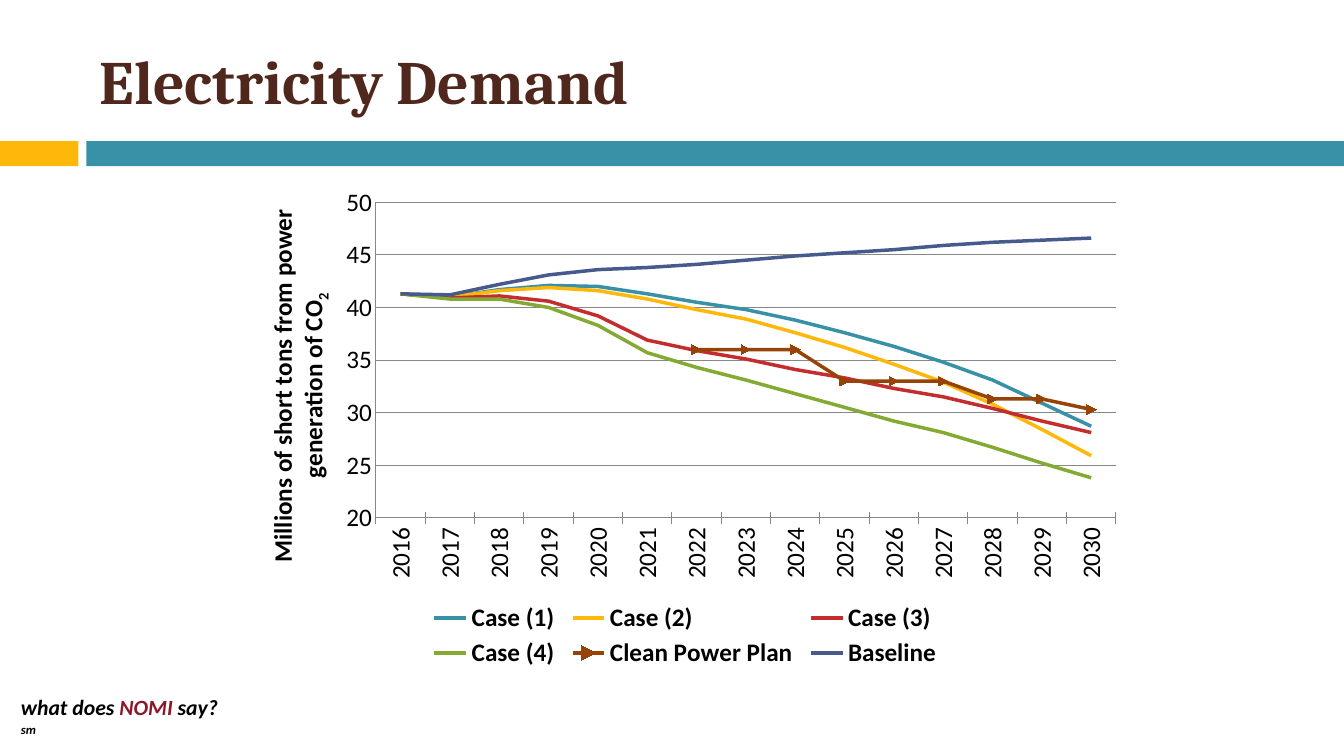
from dataclasses import dataclass

from lxml.etree import SubElement
from pptx import Presentation
from pptx.chart.data import CategoryChartData
from pptx.dml.color import RGBColor
from pptx.enum.chart import XL_CHART_TYPE as CT, XL_LEGEND_POSITION as LP
from pptx.enum.chart import XL_MARKER_STYLE as MS, XL_TICK_LABEL_POSITION as TLP, XL_TICK_MARK as TM
from pptx.enum.shapes import MSO_SHAPE
from pptx.enum.text import MSO_ANCHOR, PP_ALIGN
from pptx.oxml.ns import qn
from pptx.util import Cm, Pt


@dataclass(frozen=True)
class Theme:
    """Colours, fonts and type sizes of the slide."""
    teal: str = "3891A7"
    gold: str = "FEB80A"
    red: str = "C32D2E"
    green: str = "84AA33"
    rust: str = "964305"
    navy: str = "475A8D"
    brown: str = "4F271C"
    wine: str = "8C172C"
    black: str = "000000"
    grey: str = "878787"
    heading: str = "Cambria"
    body: str = "Calibri"
    title_size: float = 44
    chart_size: float = 18
    tag_size: float = 15.5


@dataclass(frozen=True)
class Box:
    """A rectangle in centimetres."""
    x: float
    y: float
    w: float
    h: float

    def emu(self):
        """Return the four lengths for python-pptx."""
        return Cm(self.x), Cm(self.y), Cm(self.w), Cm(self.h)


T = Theme()
YEARS = range(2016, 2031)
SERIES = {
    "Case (1)": (T.teal, [41.3, 41, 41.7, 42.1, 42, 41.3, 40.5, 39.8, 38.8, 37.6, 36.3, 34.8, 33.1, 30.9, 28.7]),
    "Case (2)": (T.gold, [41.3, 41, 41.6, 41.9, 41.6, 40.8, 39.8, 38.9, 37.6, 36.2, 34.6, 32.9, 30.8, 28.4, 25.9]),
    "Case (3)": (T.red, [41.3, 40.9, 41.1, 40.6, 39.2, 36.9, 35.9, 35.1, 34.1, 33.3, 32.3, 31.5, 30.4, 29.2, 28.1]),
    "Case (4)": (T.green, [41.3, 40.8, 40.8, 40, 38.3, 35.7, 34.3, 33.1, 31.8, 30.5, 29.2, 28.1, 26.7, 25.2, 23.8]),
    "Clean Power Plan": (T.rust, [None] * 6 + [36, 36, 36, 33, 33, 33, 31.3, 31.3, 30.3]),
    "Baseline": (T.navy, [41.3, 41.2, 42.2, 43.1, 43.6, 43.8, 44.1, 44.5, 44.9, 45.2, 45.5, 45.9, 46.2, 46.4, 46.6]),
}


def style_font(font, size, color=T.black, name=T.body, bold=False, italic=False):
    """Format a font."""
    font.size, font.name, font.bold, font.italic = Pt(size), name, bold, italic
    font.color.rgb = RGBColor.from_string(color)


def add_text(p, text, size, baseline=0, **fmt):
    """Add a formatted run to a paragraph."""
    r = p.add_run()
    r.text = text
    style_font(r.font, size, **fmt)
    if baseline:
        r._r.get_or_add_rPr().set("baseline", str(baseline * 1000))


def add_title(s, box, text):
    """Fill the title placeholder."""
    sp = s.shapes.title
    sp.left, sp.top, sp.width, sp.height = box.emu()
    tf = sp.text_frame
    tf.vertical_anchor = MSO_ANCHOR.MIDDLE
    p = tf.paragraphs[0]
    p.alignment = PP_ALIGN.LEFT
    add_text(p, text, T.title_size, color=T.brown, name=T.heading, bold=True)


def add_band(s, box, tab=1.98, gap=0.2):
    """Draw the gold tab and the teal bar beside it."""
    bar = tab + gap
    for x, w, color in ((0, tab, T.gold), (bar, box.w - bar, T.teal)):
        sp = s.shapes.add_shape(MSO_SHAPE.RECTANGLE, *Box(box.x + x, box.y, w, box.h).emu())
        sp.shadow.inherit = False
        sp.fill.solid()
        sp.fill.fore_color.rgb = RGBColor.from_string(color)
        sp.line.fill.background()


def add_tagline(s, box):
    """Write the tagline in the footer."""
    tf = s.shapes.add_textbox(*box.emu()).text_frame
    tf.word_wrap = False
    p = tf.paragraphs[0]
    for text, color, baseline in (("what does ", T.black, 0), ("NOMI ", T.wine, 0),
                                  ("say? ", T.black, 0), ("sm", T.black, 30)):
        add_text(p, text, T.tag_size, baseline, color=color, bold=True, italic=True)


def set_layout(parent, index, inner=False, **fractions):
    """Place a chart part by fractions of the chart area."""
    for old in parent.findall(qn("c:layout")):
        parent.remove(old)
    layout = SubElement(parent, qn("c:layout"))
    parent.insert(index, layout)
    manual = SubElement(layout, qn("c:manualLayout"))
    if inner:
        SubElement(manual, qn("c:layoutTarget")).set("val", "inner")
    for key in ("x", "y"):
        SubElement(manual, qn(f"c:{key}Mode")).set("val", "edge")
    for key, value in fractions.items():
        SubElement(manual, qn(f"c:{key}")).set("val", str(value))


def style_axes(chart):
    """Format both axes and the value axis title."""
    cat, val = chart.category_axis, chart.value_axis
    cat.tick_label_position = TLP.LOW
    cat.major_tick_mark, val.major_tick_mark = TM.CROSS, TM.NONE
    cat.tick_labels.font.size = Pt(T.chart_size)
    cat._element.find(qn("c:txPr")).find(qn("a:bodyPr")).set("rot", "-5400000")
    val.minimum_scale, val.maximum_scale, val.major_unit = 20, 50, 5
    val.has_major_gridlines = True
    for line in (cat.format.line, val.format.line, val.major_gridlines.format.line):
        line.color.rgb = RGBColor.from_string(T.grey)
        line.width = Pt(0.75)
    title = val.axis_title
    p = title.text_frame.paragraphs[0]
    add_text(p, "Millions of short tons from power generation of CO", T.chart_size, bold=True)
    add_text(p, "2", T.chart_size, -25, bold=True)
    set_layout(title._element, 1, x=0.03, y=0.06)


def add_emissions_chart(s, box):
    """Draw the line chart of emissions by case."""
    data = CategoryChartData(number_format="0")
    data.categories = [str(year) for year in YEARS]
    for name, (_, values) in SERIES.items():
        data.add_series(name, values)
    chart = s.shapes.add_chart(CT.LINE_MARKERS, *box.emu(), data).chart
    style_font(chart.font, T.chart_size)
    chart.has_title = False
    plot = chart.plots[0]
    plot.vary_by_categories = False
    for series in plot.series:
        color = RGBColor.from_string(SERIES[series.name][0])
        series.smooth = False
        series.format.line.color.rgb = color
        series.format.line.width = Pt(2.5)
        series.marker.style = MS.NONE
        if series.name == "Clean Power Plan":
            series.marker.style = MS.DOT
            series.marker.size = 7
            series.marker.format.fill.solid()
            series.marker.format.fill.fore_color.rgb = color
            series.marker.format.line.color.rgb = color
    style_axes(chart)
    chart.has_legend = True
    legend = chart.legend
    legend.position, legend.include_in_layout = LP.BOTTOM, False
    style_font(legend.font, T.chart_size, bold=True)
    set_layout(legend._element, 1, x=0.21, y=0.85, w=0.58, h=0.15)
    set_layout(chart._chartSpace.chart.plotArea, 0, inner=True, x=0.156, y=0.052, w=0.823, h=0.636)


def main():
    """Build and save the slide."""
    prs = Presentation()
    prs.slide_width, prs.slide_height = Cm(33.87), Cm(19.05)
    s = prs.slides.add_slide(prs.slide_layouts[5])
    add_band(s, Box(0, 3.56, 33.87, 0.63))
    add_tagline(s, Box(0.28, 17.35, 5.92, 0.91))
    add_title(s, Box(2.26, 0.64, 30.2, 2.74), "Electricity Demand")
    add_emissions_chart(s, Box(5.94, 4.45, 22.66, 12.5))
    prs.save("out.pptx")


if __name__ == "__main__":
    main()
